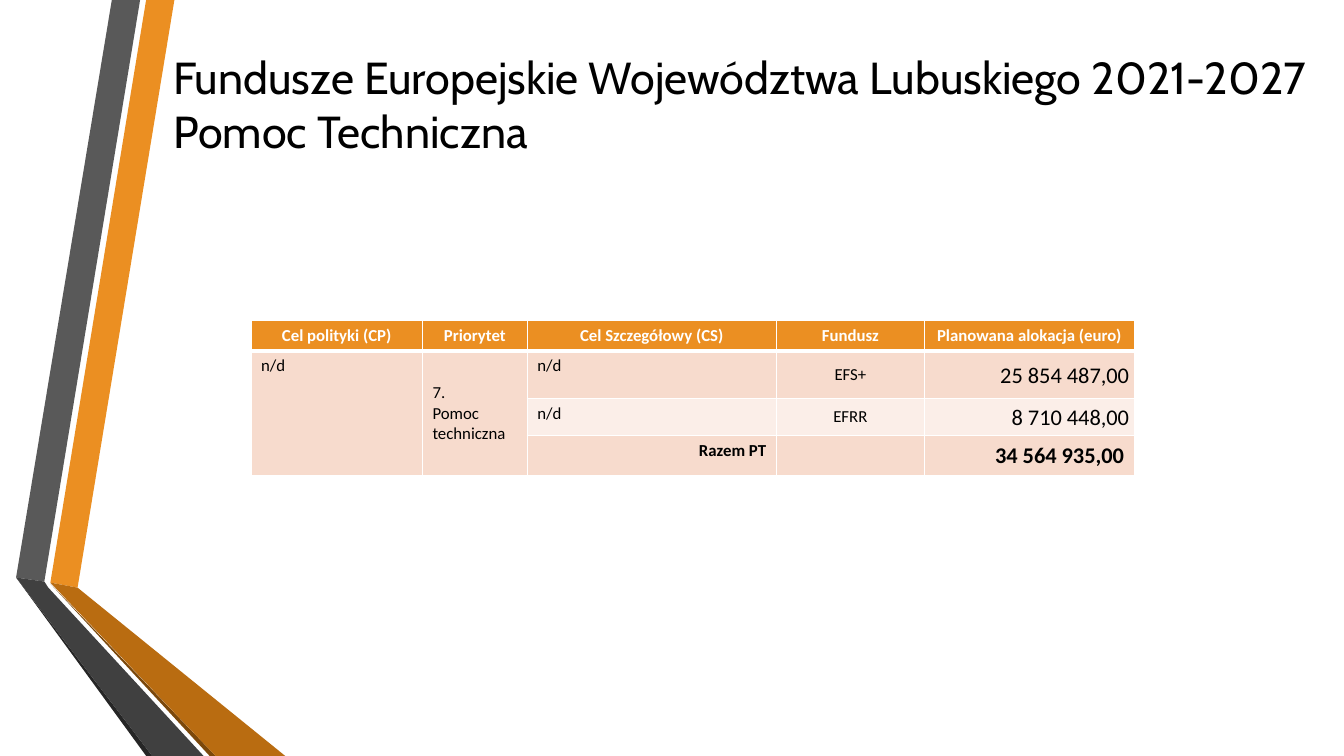
import pptx
import pptx.dml.color
import pptx.enum.text
import pptx.oxml
import pptx.oxml.ns
import pptx.util

Inches = pptx.util.Inches
Pt = pptx.util.Pt
ALIGN = pptx.enum.text.PP_ALIGN
ANCHOR = pptx.enum.text.MSO_ANCHOR

COLORS = {
    "orange": "EB8F22", "orange_dark": "B96C11", "orange_edge": "7B480B",
    "grey": "595959", "grey_dark": "404040", "grey_edge": "262626",
    "band": "F7DBCD", "band_light": "FBEEE8", "white": "FFFFFF", "black": "000000",
}
RIBBONS = [
    ("orange", [(0.34, 5.78), (0.61, 5.83), (1.57, 0), (1.29, 0)]),
    ("grey", [(1.23, 0), (0.95, 0), (0, 5.73), (0.28, 5.77)]),
    ("grey_edge", [(0, 5.73), (1.29, 7.5), (1.35, 7.5)]),
    ("orange_edge", [(0.34, 5.79), (1.92, 7.5), (1.98, 7.5)]),
    ("orange_dark", [(0.34, 5.78), (1.98, 7.5), (2.67, 7.5), (0.61, 5.83)]),
    ("grey_dark", [(1.86, 7.5), (0.32, 5.83), (0.28, 5.77), (0, 5.73), (1.35, 7.5)]),
]
HEADINGS = ["Cel polityki (CP)", "Priorytet", "Cel Szczegółowy (CS)", "Fundusz",
            "Planowana alokacja (euro)"]
ALLOCATIONS = [
    ["n/d", "7.\nPomoc techniczna", "n/d", "EFS+", "25 854 487,00"],
    ["", "", "n/d", "EFRR", "8 710 448,00"],
    ["", "", "Razem PT", "", "34 564 935,00"],
]
COLUMN_WIDTHS = [1.7, 1.04, 2.47, 1.47, 2.08]
ROW_HEIGHTS = [0.3, 0.47, 0.37, 0.4]
COLUMN_ALIGN = [ALIGN.LEFT, ALIGN.LEFT, ALIGN.LEFT, ALIGN.CENTER, ALIGN.RIGHT]


def rgb(name):
    """Return the named colour."""
    return pptx.dml.color.RGBColor.from_string(COLORS[name])


def style_font(font, family, size, color, bold=False):
    """Set the look of a font."""
    font.name, font.size, font.bold = family, Pt(size), bold
    font.color.rgb = rgb(color)


def add_ribbons(slide, left, top):
    """Draw the folded ribbons from their top left corner."""
    for color, outline in RIBBONS:
        corners = [(Inches(left + x), Inches(top + y)) for x, y in outline]
        builder = slide.shapes.build_freeform(*corners[0])
        builder.add_line_segments(corners[1:], close=True)
        ribbon = builder.convert_to_shape()
        ribbon.shadow.inherit = False
        ribbon.fill.solid()
        ribbon.fill.fore_color.rgb = rgb(color)
        ribbon.line.fill.background()


def add_title(slide, left, top, width, height):
    """Place the two-line title in its box."""
    title = slide.shapes.add_textbox(*map(Inches, (left, top, width, height)))
    frame = title.text_frame
    frame.word_wrap = True
    frame.vertical_anchor = ANCHOR.MIDDLE
    frame.text = "Fundusze Europejskie Województwa Lubuskiego 2021-2027\vPomoc Techniczna"
    for run in frame.paragraphs[0].runs:
        style_font(run.font, "Cabin", 32, "black")


def set_borders(cell, bottom):
    """Give a cell white borders, with its own bottom width."""
    properties = cell._tc.get_or_add_tcPr()
    for side, points in (("L", 1), ("R", 1), ("T", 1), ("B", bottom)):
        properties.append(pptx.oxml.parse_xml(
            f'<a:ln{side} {pptx.oxml.ns.nsdecls("a")} w="{Pt(points)}"><a:solidFill>'
            f'<a:srgbClr val="{COLORS["white"]}"/></a:solidFill></a:ln{side}>'))


def fill_cell(cell, text, row, column):
    """Write and format one cell by its place in the table."""
    header, total = row == 0, row == len(ALLOCATIONS)
    amount = column == 4 and not header
    set_borders(cell, 3 if header else 1)
    cell.fill.solid()
    cell.fill.fore_color.rgb = rgb("orange" if header else "band" if row % 2 else "band_light")
    top_aligned = column in (0, 2) and not header
    cell.vertical_anchor = ANCHOR.TOP if top_aligned else ANCHOR.MIDDLE
    if amount and not total:
        cell.margin_left = cell.margin_right = Inches(0.05)
        cell.margin_top = cell.margin_bottom = 0
    cell.text_frame.text = text
    for paragraph in cell.text_frame.paragraphs:
        paragraph.alignment = ALIGN.CENTER if header else COLUMN_ALIGN[column]
        if total and column == 2:
            paragraph.alignment = ALIGN.RIGHT
        if amount and not total:
            paragraph.line_spacing = 1.07
        for run in paragraph.runs:
            style_font(run.font, "Calibri", 16 if amount else 12,
                       "white" if header else "black", header or total and column >= 2)


def add_allocation_table(slide, left, top):
    """Place the allocation table from its top left corner."""
    rows = [HEADINGS] + ALLOCATIONS
    box = (left, top, sum(COLUMN_WIDTHS), sum(ROW_HEIGHTS))
    table = slide.shapes.add_table(len(rows), len(HEADINGS), *map(Inches, box)).table
    for column, width in zip(table.columns, COLUMN_WIDTHS):
        column.width = Inches(width)
    for row, height in zip(table.rows, ROW_HEIGHTS):
        row.height = Inches(height)
    for row, texts in enumerate(rows):
        for column, text in enumerate(texts):
            fill_cell(table.cell(row, column), text, row, column)
    for column in (0, 1):
        table.cell(1, column).merge(table.cell(len(ALLOCATIONS), column))


def main():
    """Build the slide and save it."""
    deck = pptx.Presentation()
    deck.slide_width, deck.slide_height = Inches(13.33), Inches(7.5)
    slide = deck.slides.add_slide(deck.slide_layouts[6])
    add_ribbons(slide, 0.16, 0)
    add_title(slide, 1.62, 0, 11.54, 2.06)
    add_allocation_table(slide, 2.49, 3.18)
    deck.save("out.pptx")


if __name__ == "__main__":
    main()
